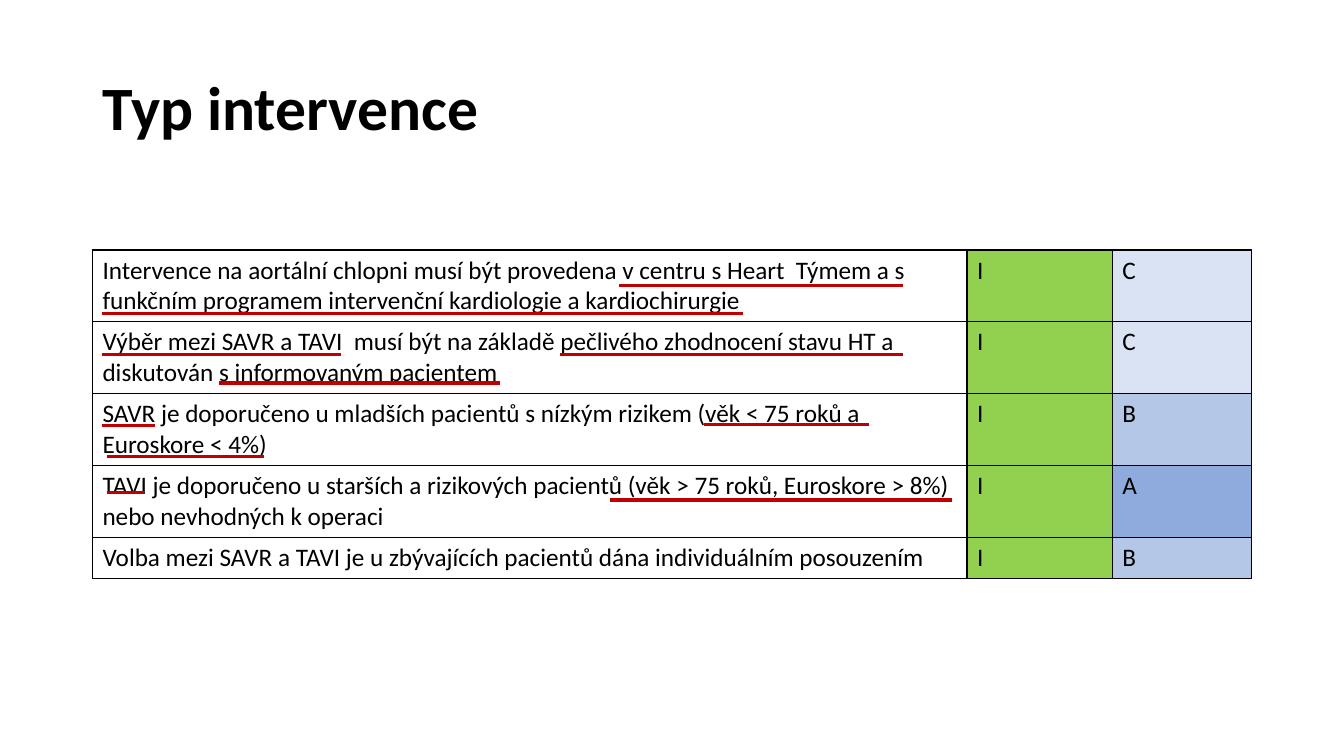
from lxml.etree import SubElement
from pptx import Presentation
from pptx.dml.color import RGBColor
from pptx.enum.shapes import MSO_CONNECTOR
from pptx.enum.text import MSO_ANCHOR, PP_ALIGN
from pptx.oxml.ns import qn
from pptx.util import Cm, Pt

BLACK, RED, GREEN = "000000", "C00000", "92D050"
LEVEL_COLORS = {"A": "8FAADC", "B": "B4C7E7", "C": "DAE3F3"}
COLUMN_WIDTHS = (22.04, 3.66, 3.51)
ONE_LINE, TWO_LINES = 1.04, 1.81

RECOMMENDATIONS = [
    ("Intervence na aortální chlopni musí být provedena v centru s Heart  Týmem a s "
     "funkčním programem intervenční kardiologie a kardiochirurgie", "I", "C", TWO_LINES),
    ("Výběr mezi SAVR a TAVI  musí být na základě pečlivého zhodnocení stavu HT a "
     "diskutován s informovaným pacientem", "I", "C", TWO_LINES),
    ("SAVR je doporučeno u mladších pacientů s nízkým rizikem (věk < 75 roků a "
     "Euroskore < 4%)", "I", "B", TWO_LINES),
    ("TAVI je doporučeno u starších a rizikových pacientů (věk > 75 roků, "
     "Euroskore > 8%) nebo nevhodných k operaci", "I", "A", TWO_LINES),
    ("Volba mezi SAVR a TAVI je u zbývajících pacientů dána individuálním posouzením",
     "I", "B", ONE_LINE),
]

UNDERLINES = [
    (15.6, 22.76, 7.19),
    (2.57, 18.72, 7.9),
    (2.57, 8.59, 8.94),
    (14.12, 22.76, 8.94),
    (5.51, 12.6, 9.65),
    (2.57, 3.91, 10.72),
    (17.73, 21.89, 10.69),
    (2.69, 6.65, 11.51),
    (2.69, 3.63, 12.4),
    (15.37, 24, 12.6),
]


def color(hex_text):
    """Return the colour for a hex string."""
    return RGBColor.from_string(hex_text)


class SlideBuilder:
    """Hold the style and the current slide."""

    def __init__(self, slide, font_name="Calibri"):
        """Keep the slide and its font."""
        self.slide = slide
        self.font_name = font_name

    def style(self, paragraph, size, bold=False):
        """Format the runs of a paragraph."""
        for run in paragraph.runs:
            run.font.name = self.font_name
            run.font.size = Pt(size)
            run.font.bold = bold
            run.font.color.rgb = color(BLACK)

    def title(self, text, left, top, width, height):
        """Place and fill the title placeholder."""
        shape = self.slide.shapes.title
        shape.left, shape.top = Cm(left), Cm(top)
        shape.width, shape.height = Cm(width), Cm(height)
        text_frame = shape.text_frame
        text_frame.text = text
        text_frame.vertical_anchor = MSO_ANCHOR.MIDDLE
        paragraph = text_frame.paragraphs[0]
        paragraph.alignment = PP_ALIGN.LEFT
        paragraph.line_spacing = 0.9
        self.style(paragraph, 44, bold=True)

    def border(self, cell):
        """Draw a thin black border on each side of a cell."""
        properties = cell._tc.get_or_add_tcPr()
        for side in ("a:lnL", "a:lnR", "a:lnT", "a:lnB"):
            line = SubElement(properties, qn(side), w=str(Pt(1)))
            fill = SubElement(line, qn("a:solidFill"))
            SubElement(fill, qn("a:srgbClr"), val=BLACK)

    def cell(self, cell, text, fill=None):
        """Fill and format one table cell."""
        cell.text_frame.text = text
        self.style(cell.text_frame.paragraphs[0], 18)
        self.border(cell)
        if fill:
            cell.fill.solid()
            cell.fill.fore_color.rgb = color(fill)
        else:
            cell.fill.background()

    def table(self, rows, left, top):
        """Add the table of recommendations with class and level."""
        height = sum(row[-1] for row in rows)
        table = self.slide.shapes.add_table(
            len(rows), len(COLUMN_WIDTHS), Cm(left), Cm(top),
            Cm(sum(COLUMN_WIDTHS)), Cm(height)).table
        table.first_row = table.horz_banding = False
        for column, width in zip(table.columns, COLUMN_WIDTHS):
            column.width = Cm(width)
        for row, (text, grade, level, row_height) in zip(table.rows, rows):
            row.height = Cm(row_height)
            self.cell(row.cells[0], text)
            self.cell(row.cells[1], grade, GREEN)
            self.cell(row.cells[2], level, LEVEL_COLORS[level])

    def underline(self, start, end, top):
        """Add a red horizontal line."""
        connector = self.slide.shapes.add_connector(
            MSO_CONNECTOR.STRAIGHT, Cm(start), Cm(top), Cm(end), Cm(top))
        connector.line.color.rgb = color(RED)
        connector.line.width = Pt(2.25)
        SubElement(connector._element.spPr, qn("a:effectLst"))


def main():
    """Build and save the presentation."""
    presentation = Presentation()
    presentation.slide_width, presentation.slide_height = Cm(33.87), Cm(19.05)
    builder = SlideBuilder(presentation.slides.add_slide(presentation.slide_layouts[5]))
    builder.title("Typ intervence", 2.33, 0.95, 29.21, 3.68)
    builder.table(RECOMMENDATIONS, 2.33, 6.3)
    for start, end, top in UNDERLINES:
        builder.underline(start, end, top)
    presentation.save("out.pptx")


if __name__ == "__main__":
    main()
